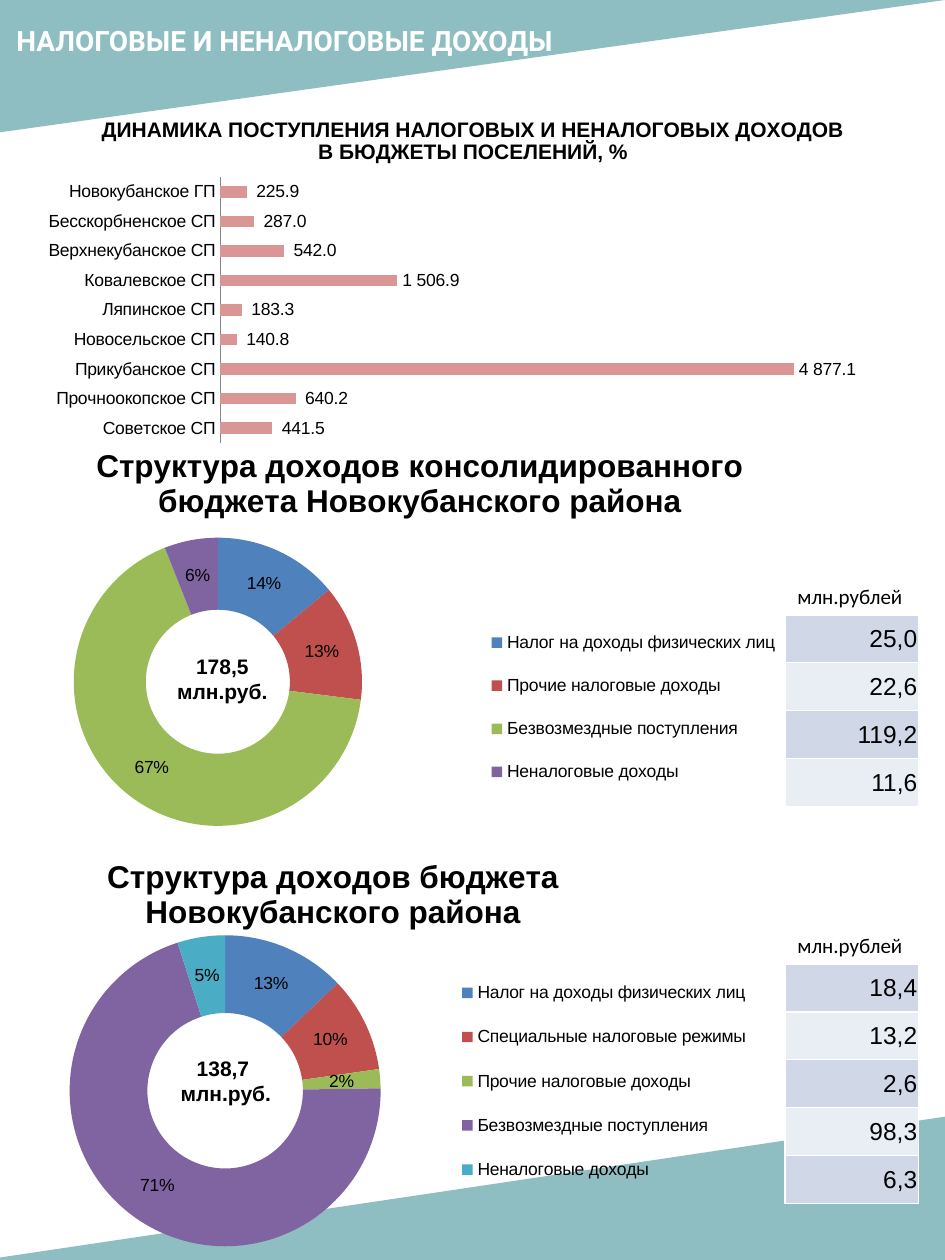
from dataclasses import dataclass
from typing import Any, NamedTuple, Optional

from lxml import etree
from pptx import Presentation
from pptx import util as u
from pptx.chart import data as cd
from pptx.dml.color import RGBColor
from pptx.enum import chart as ce
from pptx.enum import shapes, text
from pptx.oxml import ns

TEAL = RGBColor(0x51, 0x9A, 0xA0)
WHITE = RGBColor(0xFF, 0xFF, 0xFF)
BLACK = RGBColor(0, 0, 0)
GRAY = RGBColor(0x86, 0x86, 0x86)
PINK = RGBColor(0xD9, 0x96, 0x94)
BANDS = (RGBColor(0xD0, 0xD8, 0xE8), RGBColor(0xE9, 0xED, 0xF4))
SLICES = (RGBColor(0x4F, 0x81, 0xBD), RGBColor(0xC0, 0x50, 0x4D), RGBColor(0x9B, 0xBB, 0x59),
          RGBColor(0x80, 0x64, 0xA2), RGBColor(0x4B, 0xAC, 0xC6))
NUMBER = "#\\ ##0.0"
PERCENT = '0"%"'


class Box(NamedTuple):
    x: float
    y: float
    w: float
    h: float


@dataclass
class ChartItem:
    title: str
    title_size: int
    title_at: tuple[float, float]
    box: Box
    plot: Box
    values: dict[str, float]
    legend: Optional[Box] = None


@dataclass
class Label:
    lines: list[str]
    box: Box
    font: dict[str, Any]
    align: text.PP_ALIGN = text.PP_ALIGN.LEFT


@dataclass
class Column:
    top: float
    values: list[str]


def font(size: int, name: str = "Arial", bold: bool = False) -> dict[str, Any]:
    return {"size": u.Pt(size), "name": name, "bold": bold}


def apply(obj: Any, values: dict[str, Any]) -> None:
    for key, value in values.items():
        setattr(obj, key, value)


def style(f: Any, values: dict[str, Any], color: RGBColor = BLACK) -> None:
    apply(f, values)
    f.color.rgb = color


def inches(box: Box) -> list[u.Length]:
    return [u.Inches(v) for v in box]


def sub(parent: Any, tag: str, **attrs: str) -> Any:
    return etree.SubElement(parent, ns.qn(tag), attrs)


def add_triangle(s: Any, box: Box, flip: str) -> None:
    sp = s.shapes.add_shape(shapes.MSO_SHAPE.RIGHT_TRIANGLE, *inches(box))
    sp.rotation = 180
    sp.shadow.inherit = False
    sp.element.spPr.find(ns.qn("a:xfrm")).set(flip, "1")
    sp.fill.solid()
    sp.fill.fore_color.rgb = TEAL
    sub(sp.element.spPr.find(".//" + ns.qn("a:srgbClr")), "a:alpha", val="64000")
    sp.line.fill.background()


def add_label(s: Any, label: Label) -> None:
    tf = s.shapes.add_textbox(*inches(label.box)).text_frame
    apply(tf, {"word_wrap": True, "auto_size": text.MSO_AUTO_SIZE.SHAPE_TO_FIT_TEXT})
    for i, line in enumerate(label.lines):
        p = tf.add_paragraph() if i else tf.paragraphs[0]
        p.alignment = label.align
        r = p.add_run()
        r.text = line
        style(r.font, label.font)


def add_column(s: Any, column: Column) -> None:
    n = len(column.values)
    frame = s.shapes.add_table(n, 1, *inches(Box(6.23, column.top, 1.06, 0.38 * n)))
    apply(frame.table, {"first_row": False, "horz_banding": False})
    edge = u.Inches(0.01)
    for i, value in enumerate(column.values):
        cell = frame.table.cell(i, 0)
        apply(cell, {"text": value, "margin_left": edge, "margin_right": edge, "margin_top": edge,
                     "margin_bottom": 0, "vertical_anchor": text.MSO_ANCHOR.MIDDLE})
        cell.fill.solid()
        cell.fill.fore_color.rgb = BANDS[i % 2]
        p = cell.text_frame.paragraphs[0]
        p.alignment = text.PP_ALIGN.RIGHT
        style(p.runs[0].font, font(14))
    for props in frame.element.iter(ns.qn("a:tcPr")):
        for k, side in enumerate(("a:lnL", "a:lnR", "a:lnT", "a:lnB")):
            ln = etree.Element(ns.qn(side), w="12700")
            sub(sub(ln, "a:solidFill"), "a:srgbClr", val=str(WHITE))
            props.insert(k, ln)


def place(chart: Any, tag: str, values: dict[str, float], inner: bool = False) -> None:
    parent = chart.element.find(".//" + ns.qn(tag))
    for old in parent.findall(ns.qn("c:layout")):
        parent.remove(old)
    layout = etree.Element(ns.qn("c:layout"))
    manual = sub(layout, "c:manualLayout")
    if inner:
        sub(manual, "c:layoutTarget", val="inner")
    for axis in "xy":
        sub(manual, f"c:{axis}Mode", val="edge")
    for key, value in values.items():
        sub(manual, f"c:{key}", val=str(value))
    heads = (ns.qn("c:tx"), ns.qn("c:legendPos"))
    parent.insert(int(len(parent) > 0 and parent[0].tag in heads), layout)


def add_chart(s: Any, item: ChartItem, kind: ce.XL_CHART_TYPE, label_format: str) -> Any:
    data = cd.CategoryChartData()
    data.categories = list(item.values)
    data.add_series("Series 1", list(item.values.values()))
    chart = s.shapes.add_chart(kind, *inches(item.box), data).chart
    style(chart.font, font(10))
    apply(chart, {"has_title": True, "has_legend": item.legend is not None})
    tf = chart.chart_title.text_frame
    tf.text = item.title
    style(tf.paragraphs[0].runs[0].font, font(item.title_size, bold=True))
    place(chart, "c:title", dict(zip("xy", item.title_at)))
    place(chart, "c:plotArea", item.plot._asdict(), inner=True)
    if item.legend:
        apply(chart.legend, {"position": ce.XL_LEGEND_POSITION.RIGHT, "include_in_layout": False})
        place(chart, "c:legend", item.legend._asdict())
    plot = chart.plots[0]
    plot.has_data_labels = True
    apply(plot.data_labels, {"show_value": True, "show_percentage": False,
                             "number_format": label_format, "number_format_is_linked": False})
    frame = etree.Element(ns.qn("c:spPr"))
    sub(frame, "a:noFill")
    sub(sub(frame, "a:ln"), "a:noFill")
    chart.element.find(ns.qn("c:chart")).addnext(frame)
    return chart


def add_bars(s: Any, item: ChartItem) -> None:
    chart = add_chart(s, item, ce.XL_CHART_TYPE.BAR_CLUSTERED, NUMBER)
    plot = chart.plots[0]
    apply(plot, {"gap_width": 150, "overlap": -25, "vary_by_categories": False})
    plot.data_labels.position = ce.XL_LABEL_POSITION.OUTSIDE_END
    fill = plot.series[0].format.fill
    fill.solid()
    fill.fore_color.rgb = PINK
    apply(chart.category_axis, {"reverse_order": True, "major_tick_mark": ce.XL_TICK_MARK.NONE})
    chart.category_axis.format.line.color.rgb = GRAY
    apply(chart.value_axis, {"visible": False, "has_major_gridlines": False,
                             "minimum_scale": 0, "maximum_scale": 6000})


def add_ring(s: Any, item: ChartItem) -> None:
    chart = add_chart(s, item, ce.XL_CHART_TYPE.DOUGHNUT, PERCENT)
    for i, color in enumerate(SLICES[:len(item.values)]):
        fill = chart.plots[0].series[0].points[i].format.fill
        fill.solid()
        fill.fore_color.rgb = color


def add_title(s: Any, words: str) -> None:
    sp = s.shapes.title
    apply(sp, dict(zip(("left", "top", "width", "height"), inches(Box(0.03, 0.14, 4.51, 0.64)))))
    tf = sp.text_frame
    apply(tf, {"text": words, "word_wrap": True, "vertical_anchor": text.MSO_ANCHOR.TOP,
               "auto_size": text.MSO_AUTO_SIZE.NONE})
    tf.paragraphs[0].alignment = text.PP_ALIGN.LEFT
    style(tf.paragraphs[0].runs[0].font, font(16, "Roboto", True), WHITE)
    s.shapes.element.append(sp.element)


SETTLEMENTS = ChartItem(
    "ДИНАМИКА ПОСТУПЛЕНИЯ НАЛОГОВЫХ И НЕНАЛОГОВЫХ ДОХОДОВ В БЮДЖЕТЫ ПОСЕЛЕНИЙ, %", 12, (0.1, 0.04),
    Box(0.03, 0.78, 7.47, 2.85), Box(0.23, 0.22, 0.75, 0.74),
    {"Новокубанское ГП": 225.9, "Бесскорбненское СП": 287, "Верхнекубанское СП": 542,
     "Ковалевское СП": 1506.9, "Ляпинское СП": 183.3, "Новосельское СП": 140.8,
     "Прикубанское СП": 4877.1, "Прочноокопское СП": 640.2, "Советское СП": 441.5})
RINGS = (
    ChartItem("Структура доходов консолидированного бюджета Новокубанского района", 18, (0.11, 0.04),
              Box(-0.02, 3.35, 6.73, 3.38), Box(0.09, 0.27, 0.34, 0.68),
              {"Налог на доходы физических лиц": 14, "Прочие налоговые доходы": 13,
               "Безвозмездные поступления": 67, "Неналоговые доходы": 6}, Box(0.57, 0.44, 0.36, 0.46)),
    ChartItem("Структура доходов бюджета Новокубанского района", 18, (0.17, 0.1),
              Box(-0.27, 6.37, 6.33, 3.75), Box(0.13, 0.28, 0.39, 0.66),
              {"Налог на доходы физических лиц": 13, "Специальные налоговые режимы": 10,
               "Прочие налоговые доходы": 2, "Безвозмездные поступления": 71,
               "Неналоговые доходы": 5}, Box(0.61, 0.33, 0.38, 0.52)))
COLUMNS = (Column(4.88, ["25,0", "22,6", "119,2", "11,6"]),
           Column(7.65, ["18,4", "13,2", "2,6", "98,3", "6,3"]))
TOTALS = (Label(["178,5", "млн.руб."], Box(1.25, 5.14, 1.03, 0.5), font(12, bold=True), text.PP_ALIGN.CENTER),
          Label(["138,7", " млн.руб."], Box(1.28, 8.33, 0.98, 0.5), font(12, bold=True), text.PP_ALIGN.CENTER))


def main() -> None:
    prs = Presentation()
    apply(prs, {"slide_width": u.Inches(7.5), "slide_height": u.Inches(10)})
    s = prs.slides.add_slide(prs.slide_layouts[5])
    add_triangle(s, Box(0, 0, 7.5, 1.05), "flipH")
    add_triangle(s, Box(-0.13, 8.86, 7.65, 1.14), "flipV")
    add_title(s, "НАЛОГОВЫЕ И НЕНАЛОГОВЫЕ ДОХОДЫ")
    for column in COLUMNS:
        add_label(s, Label(["млн.рублей"], Box(6.23, column.top - 0.3, 1.1, 0.3), font(12, "Calibri")))
        add_column(s, column)
    add_bars(s, SETTLEMENTS)
    for ring, total in zip(RINGS, TOTALS):
        add_ring(s, ring)
        add_label(s, total)
    prs.save("out.pptx")


if __name__ == "__main__":
    main()
